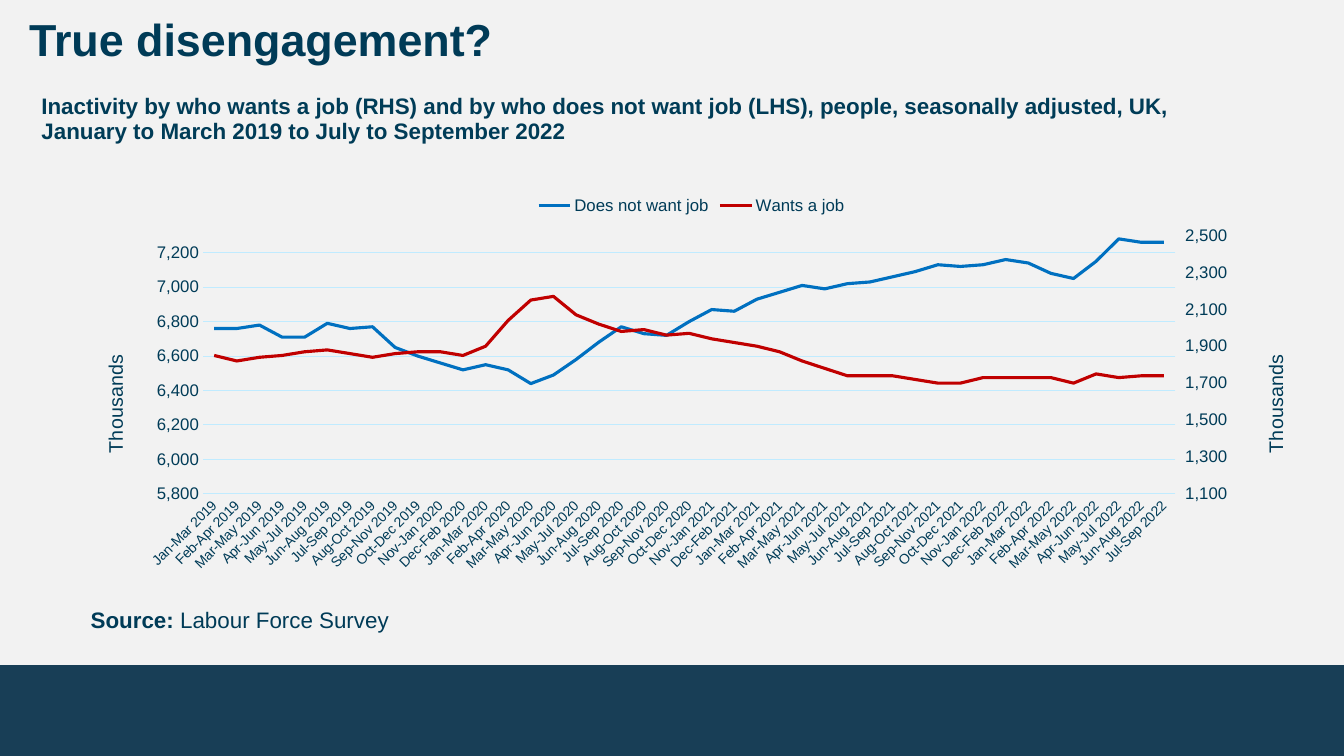
import copy
from dataclasses import dataclass

import lxml.etree
import pptx
import pptx.chart.axis
import pptx.chart.data
import pptx.dml.color
import pptx.enum.chart
import pptx.enum.shapes
import pptx.enum.text
import pptx.oxml.ns
import pptx.util

NAVY = pptx.dml.color.RGBColor(0x00, 0x3B, 0x57)
SUBTITLE_NAVY = pptx.dml.color.RGBColor(0x00, 0x3C, 0x57)
FOOTER_NAVY = pptx.dml.color.RGBColor(0x18, 0x3E, 0x56)
PAPER = pptx.dml.color.RGBColor(0xF2, 0xF2, 0xF2)
GRID_BLUE = pptx.dml.color.RGBColor(0xC0, 0xEB, 0xFF)
BLUE = pptx.dml.color.RGBColor(0x00, 0x70, 0xC0)
RED = pptx.dml.color.RGBColor(0xC0, 0x00, 0x00)
FONT = "Arial"
WIDTH = pptx.util.Inches(13.33)
HEIGHT = pptx.util.Inches(7.5)
MONTHS = "Jan Feb Mar Apr May Jun Jul Aug Sep Oct Nov Dec".split()
FIRST_YEAR = 2019
UNIT = 10000


@dataclass
class Box:
    """Position and size as percentages of the slide."""
    x: float
    y: float
    w: float
    h: float

    def emu(self) -> tuple[int, int, int, int]:
        return (int(WIDTH * self.x / 100), int(HEIGHT * self.y / 100),
                int(WIDTH * self.w / 100), int(HEIGHT * self.h / 100))


@dataclass
class Text:
    box: Box
    runs: list[tuple[str, bool]]
    size: int
    color: pptx.dml.color.RGBColor
    inset: tuple[float, float] = (0, 0)
    spacing: float = 1.0
    after: float = 0
    anchor: pptx.enum.text.MSO_ANCHOR = pptx.enum.text.MSO_ANCHOR.TOP


@dataclass
class Line:
    name: str
    color: pptx.dml.color.RGBColor
    values: list[int]


@dataclass
class Scale:
    low: int
    high: int
    title_x: float


TEXTS = [
    Text(Box(6.75, 79.87, 87.77, 3.6),
         [("Source: ", True), ("Labour Force Survey", False)],
         16, NAVY, spacing=1.1, after=5),
    Text(Box(3.08, 12.4, 89.27, 6.8),
         [("Inactivity by who wants a job (RHS) and by who does not want job (LHS), people, "
           "seasonally adjusted, UK, January to March 2019 to July to September 2022", True)],
         16, SUBTITLE_NAVY, spacing=0.95, after=7.5),
    Text(Box(1.43, 0.8, 87.1, 8.53), [("True disengagement?", True)],
         32, NAVY, inset=(0.1, 0.05), anchor=pptx.enum.text.MSO_ANCHOR.MIDDLE),
]
FOOTER = Box(0, 88, 100, 12)
CHART = Box(5.55, 24.53, 91.82, 52.13)
LEFT_SCALE = Scale(5800000, 7300000, 0.02)
RIGHT_SCALE = Scale(1100000, 2500000, 0.96)
LINES = [
    Line("Does not want job", BLUE, [
        676, 676, 678, 671, 671, 679, 676, 677, 665, 660, 656, 652, 655, 652, 644,
        649, 658, 668, 677, 673, 672, 680, 687, 686, 693, 697, 701, 699, 702, 703,
        706, 709, 713, 712, 713, 716, 714, 708, 705, 715, 728, 726, 726]),
    Line("Wants a job", RED, [
        185, 182, 184, 185, 187, 188, 186, 184, 186, 187, 187, 185, 190, 204, 215,
        217, 207, 202, 198, 199, 196, 197, 194, 192, 190, 187, 182, 178, 174, 174,
        174, 172, 170, 170, 173, 173, 173, 173, 170, 175, 173, 174, 174]),
]


def quarter(i: int) -> str:
    end = i + 2
    return f"{MONTHS[i % 12]}-{MONTHS[end % 12]} {FIRST_YEAR + end // 12}"


def style(font, size: float, color=NAVY) -> None:
    font.name, font.size = FONT, pptx.util.Pt(size)
    font.color.rgb = color


def add_text(slide, t: Text) -> None:
    sp = slide.shapes.add_textbox(*t.box.emu())
    tf = sp.text_frame
    tf.word_wrap = True
    tf.vertical_anchor = t.anchor
    tf.margin_left = tf.margin_right = pptx.util.Inches(t.inset[0])
    tf.margin_top = tf.margin_bottom = pptx.util.Inches(t.inset[1])
    p = tf.paragraphs[0]
    p.line_spacing, p.space_after = t.spacing, pptx.util.Pt(t.after)
    style(p.font, t.size, t.color)
    for words, bold in t.runs:
        r = p.add_run()
        r.text, r.font.bold = words, bold


def set_layout(layout, **parts: object) -> None:
    for child in list(layout):
        layout.remove(child)
    manual = lxml.etree.SubElement(layout, pptx.oxml.ns.qn("c:manualLayout"))
    for tag, val in parts.items():
        lxml.etree.SubElement(manual, pptx.oxml.ns.qn(f"c:{tag}")).set("val", str(val))


def set_scale(axis, element, scale: Scale) -> None:
    axis.minimum_scale, axis.maximum_scale = scale.low, scale.high
    axis.major_unit = 200000
    tf = axis.axis_title.text_frame
    tf.text = "Thousands"
    style(tf.paragraphs[0].font, 14)
    tf.paragraphs[0].font.bold = False
    body = element.xpath("c:title//a:bodyPr")[0]
    body.set("rot", "-5400000")
    body.set("vert", "horz")
    set_layout(element.xpath("c:title/c:layout")[0], xMode="edge", yMode="edge",
               x=scale.title_x, y=0.42)


def add_right_axis(plot_area) -> None:
    first = plot_area.xpath("c:lineChart")[0]
    second = copy.deepcopy(first)
    first.addnext(second)
    first.remove(first.xpath("c:ser")[1])
    second.remove(second.xpath("c:ser")[0])
    cat, val = [copy.deepcopy(plot_area.xpath(tag)[0]) for tag in ("c:catAx", "c:valAx")]
    plot_area.xpath("c:valAx")[0].addnext(val)
    val.addnext(cat)
    ids = {e.get("val"): str(5001 + i) for i, e in enumerate(second.xpath("c:axId"))}
    for part in (second, cat, val):
        for e in part.xpath("c:axId | c:crossAx"):
            e.set("val", ids[e.get("val")])
    pptx.chart.axis.CategoryAxis(cat).visible = False
    val.xpath("c:axPos")[0].set("val", "r")
    val.xpath("c:crosses")[0].set("val", "max")
    axis = pptx.chart.axis.ValueAxis(val)
    axis.has_major_gridlines = False
    axis.major_tick_mark = pptx.enum.chart.XL_TICK_MARK.OUTSIDE
    set_scale(axis, val, RIGHT_SCALE)


def add_line_chart(slide) -> None:
    data = pptx.chart.data.CategoryChartData(number_format="#,##0")
    data.categories = [quarter(i) for i in range(len(LINES[0].values))]
    for line in LINES:
        data.add_series(line.name, [v * UNIT for v in line.values])
    chart = slide.shapes.add_chart(pptx.enum.chart.XL_CHART_TYPE.LINE, *CHART.emu(), data).chart
    style(chart.font, 10)
    chart.has_title = False
    chart.has_legend = True
    chart.legend.position = pptx.enum.chart.XL_LEGEND_POSITION.TOP
    chart.legend.include_in_layout = False
    style(chart.legend.font, 12)
    chart.plots[0].vary_by_categories = False
    for series, line in zip(chart.plots[0].series, LINES):
        series.smooth = False
        series.format.line.color.rgb = line.color
        series.format.line.width = pptx.util.Pt(2.25)
    cat, val = chart.category_axis, chart.value_axis
    for axis, size in ((cat, 10), (val, 12)):
        axis.major_tick_mark = axis.minor_tick_mark = pptx.enum.chart.XL_TICK_MARK.NONE
        style(axis.tick_labels.font, size)
    for rule in (cat.format.line, val.major_gridlines.format.line):
        rule.color.rgb = GRID_BLUE
        rule.width = pptx.util.Pt(0.75)
    val.format.line.fill.background()
    val.tick_labels.number_format = "#,##0,"
    val.tick_labels.number_format_is_linked = False
    plot_area = chart.element.xpath("c:chart/c:plotArea")[0]
    plot_area.xpath("c:catAx/c:txPr/a:bodyPr")[0].set("rot", "-2700000")
    set_scale(val, plot_area.xpath("c:valAx")[0], LEFT_SCALE)
    for old in plot_area.xpath("c:layout"):
        plot_area.remove(old)
    layout = lxml.etree.Element(pptx.oxml.ns.qn("c:layout"))
    plot_area.insert(0, layout)
    set_layout(layout, layoutTarget="inner", xMode="edge", yMode="edge",
               x=0.104, y=0.127, w=0.788, h=0.656)
    add_right_axis(plot_area)


def main() -> None:
    prs = pptx.Presentation()
    prs.slide_width, prs.slide_height = WIDTH, HEIGHT
    slide = prs.slides.add_slide(prs.slide_layouts[6])
    slide.background.fill.solid()
    slide.background.fill.fore_color.rgb = PAPER
    sp = slide.shapes.add_shape(pptx.enum.shapes.MSO_SHAPE.RECTANGLE, *FOOTER.emu())
    sp.shadow.inherit = False
    sp.fill.solid()
    sp.fill.fore_color.rgb = FOOTER_NAVY
    sp.line.fill.background()
    for t in TEXTS:
        add_text(slide, t)
    add_line_chart(slide)
    prs.save("out.pptx")


if __name__ == "__main__":
    main()
